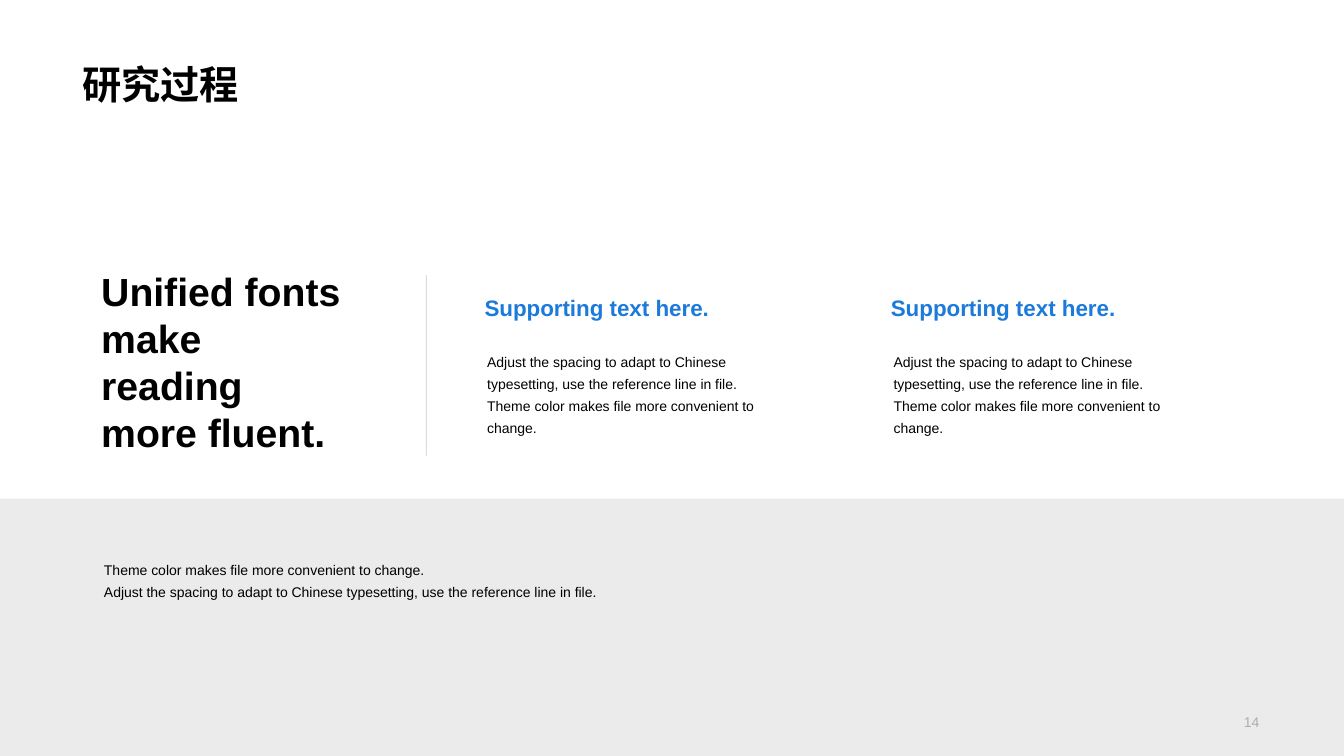
from lxml import etree
from pptx import Presentation
from pptx.dml.color import RGBColor
from pptx.enum.shapes import MSO_CONNECTOR, MSO_SHAPE
from pptx.enum.text import MSO_ANCHOR, MSO_AUTO_SIZE, PP_ALIGN
from pptx.oxml.ns import qn
from pptx.util import Emu, Pt

LEFT, RIGHT = PP_ALIGN.LEFT, PP_ALIGN.RIGHT
TOP, MIDDLE, BOTTOM = MSO_ANCHOR.TOP, MSO_ANCHOR.MIDDLE, MSO_ANCHOR.BOTTOM
NO_FIT = MSO_AUTO_SIZE.NONE
RECT, STRAIGHT = MSO_SHAPE.RECTANGLE, MSO_CONNECTOR.STRAIGHT
COLORS = {"text": "000000", "accent": "1B7ADA", "muted": "808080", "band": "D9D9D9"}
FONT = "Arial"
SPACING = "Adjust the spacing to adapt to Chinese typesetting, use the reference line in file."
THEME = "Theme color makes file more convenient to change."


def px(n):
    return Emu(n * 9525)


def write(tf, lines, size=10, color="text", bold=False, align=LEFT,
          anchor=TOP, spacing=1.0, inset=None):
    tf.word_wrap = True
    tf.auto_size = NO_FIT
    tf.vertical_anchor = anchor
    if inset is not None:
        tf.margin_left = tf.margin_right = px(inset)
        tf.margin_top = tf.margin_bottom = px(inset)
    for i, line in enumerate(lines):
        p = tf.add_paragraph() if i else tf.paragraphs[0]
        p.alignment = align
        p.line_spacing = spacing
        p.space_before = Pt(0)
        r = p.add_run()
        r.text = line
        r.font.name = FONT
        r.font.size = Pt(size)
        r.font.bold = bold
        r.font.color.rgb = RGBColor.from_string(COLORS[color])


class SlideBuilder:
    def __init__(self, prs):
        self.s = prs.slides.add_slide(prs.slide_layouts[5])

    def set_alpha(self, fill, percent):
        clr = fill.find(".//" + qn("a:srgbClr"))
        etree.SubElement(clr, qn("a:alpha")).set("val", str(percent * 1000))

    def title(self, text, x, y, w, h, **fmt):
        sp = self.s.shapes.title
        sp.left, sp.top, sp.width, sp.height = px(x), px(y), px(w), px(h)
        write(sp.text_frame, [text], **fmt)

    def text(self, lines, x, y, w, h, **fmt):
        sp = self.s.shapes.add_textbox(px(x), px(y), px(w), px(h))
        write(sp.text_frame, lines, **fmt)

    def band(self, x, y, w, h, color, alpha):
        sp = self.s.shapes.add_shape(RECT, px(x), px(y), px(w), px(h))
        sp.shadow.inherit = False
        sp.fill.solid()
        sp.fill.fore_color.rgb = RGBColor.from_string(COLORS[color])
        sp.line.fill.background()
        self.set_alpha(sp.fill._xPr.find(qn("a:solidFill")), alpha)

    def line(self, x1, y1, x2, y2, color, width, alpha):
        cn = self.s.shapes.add_connector(STRAIGHT, px(x1), px(y1), px(x2), px(y2))
        cn.line.width = Pt(width)
        cn.line.color.rgb = RGBColor.from_string(COLORS[color])
        sp_pr = cn._element.spPr
        self.set_alpha(sp_pr.find(qn("a:ln")), alpha)
        etree.SubElement(sp_pr, qn("a:effectLst"))


def main():
    prs = Presentation()
    prs.slide_width, prs.slide_height = px(1280), px(720)
    s = SlideBuilder(prs)
    s.title("研究过程", 69, 0, 1140, 108, size=28, bold=True, anchor=BOTTOM, spacing=0.9)
    s.text(["14"], 930, 676, 279, 23, color="muted", align=RIGHT, anchor=MIDDLE)
    s.text(["Unified fonts", "make", "reading", "more fluent."],
           87, 250, 328, 191, size=28, bold=True)
    s.band(0, 475, 1280, 245, "band", 50)
    s.line(406, 262, 406, 434, "muted", 0.5, 40)
    for x in (452, 839):
        s.text([SPACING, THEME], x, 320, 308, 105, spacing=1.3, inset=12)
        s.text(["Supporting text here."], x, 275, 308, 36,
               size=16, color="accent", bold=True)
    s.text([THEME, SPACING], 87, 518, 500, 62, spacing=1.3, inset=12)
    prs.save("out.pptx")


if __name__ == "__main__":
    main()
